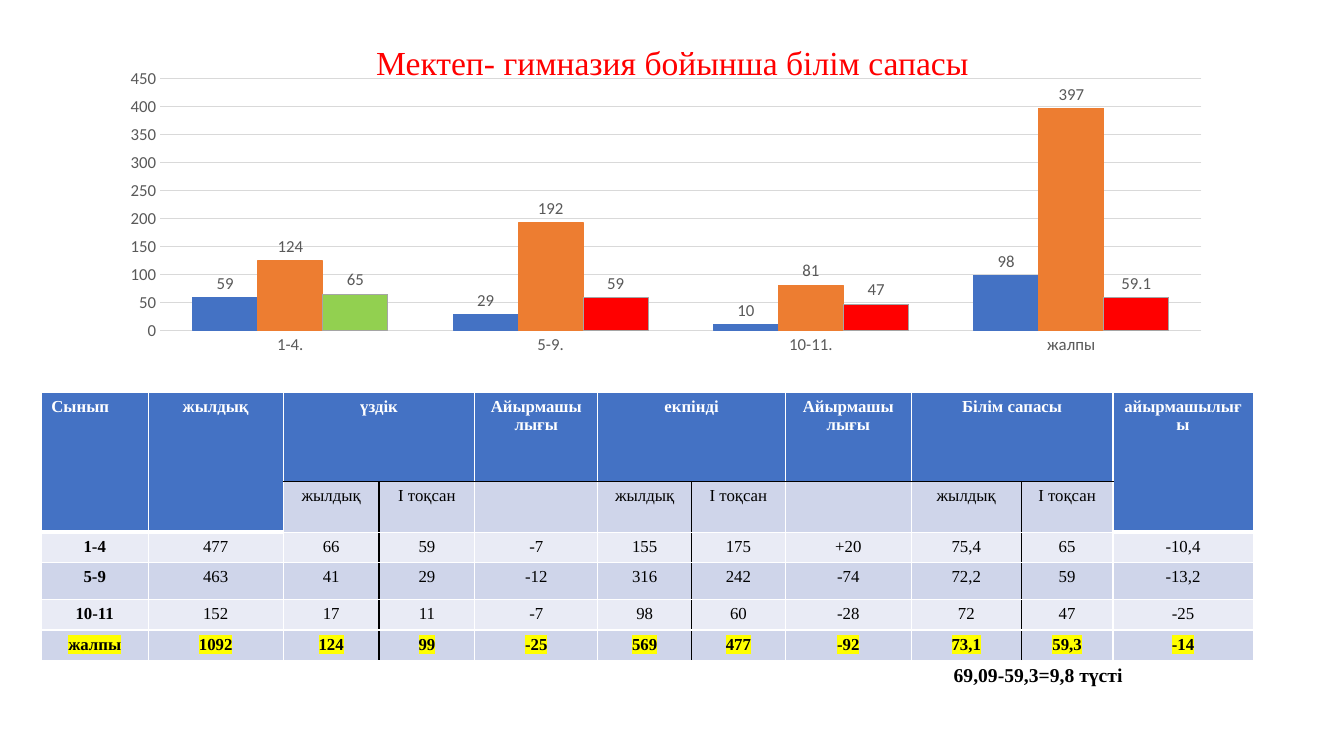
from lxml.etree import SubElement
from pptx import Presentation
from pptx.chart.data import CategoryChartData
from pptx.dml.color import RGBColor
from pptx.enum.chart import XL_CHART_TYPE as ChartType, XL_LABEL_POSITION as LabelPosition
from pptx.enum.chart import XL_TICK_MARK as TickMark
from pptx.enum.text import MSO_ANCHOR as Anchor, PP_ALIGN as Align
from pptx.oxml import parse_xml
from pptx.oxml.ns import nsdecls, qn
from pptx.util import Inches, Pt

WHITE = RGBColor(0xFF, 0xFF, 0xFF)
BLACK = RGBColor(0x00, 0x00, 0x00)
RED = RGBColor(0xFF, 0x00, 0x00)
BLUE = RGBColor(0x44, 0x72, 0xC4)
ORANGE = RGBColor(0xED, 0x7D, 0x31)
GREEN = RGBColor(0x92, 0xD0, 0x50)
SILVER = RGBColor(0xA5, 0xA5, 0xA5)
GRID_GRAY = RGBColor(0xD9, 0xD9, 0xD9)
LABEL_GRAY = RGBColor(0x59, 0x59, 0x59)
LIGHT_BAND = RGBColor(0xE9, 0xEB, 0xF5)
DARK_BAND = RGBColor(0xCF, 0xD5, 0xEA)
YELLOW = RGBColor(0xFF, 0xFF, 0x00)
TEXT_FONT = "Times New Roman"
CHART_FONT = "Calibri"

CATEGORIES = ["1-4.", "5-9.", "10-11.", "жалпы"]
SERIES = [  # name, values, fill, outline
    ("Series 1", (59, 29, 10, 98), BLUE, BLUE),
    ("Series 2", (124, 192, 81, 397), ORANGE, ORANGE),
    ("Series 3", (65, 59, 47, 59.1), RED, SILVER),
]
PLOT_LAYOUT = {"x": 0.084, "y": 0.121, "w": 0.86, "h": 0.793}

COLUMN_WIDTHS = [1.06, 1.34, 0.95, 0.95, 1.22, 0.93, 0.93, 1.25, 1.09, 0.91, 1.39]
ROW_HEIGHTS = [0.89, 0.48, 0.3, 0.37, 0.3, 0.3]
TABLE_ROWS = [
    ["Сынып", "жылдық", "үздік", "", "Айырмашы\nлығы", "екпінді", "",
     "Айырмашы\nлығы", "Білім сапасы", "", "айырмашылығы"],
    ["", "", "жылдық", "І тоқсан", "", "жылдық", "І тоқсан", "", "жылдық", "І тоқсан", ""],
    ["1-4", "477", "66", "59", "-7", "155", "175", "+20", "75,4", "65", "-10,4"],
    ["5-9", "463", "41", "29", "-12", "316", "242", "-74", "72,2", "59", "-13,2"],
    ["10-11", "152", "17", "11", "-7", "98", "60", "-28", "72", "47", "-25"],
    ["жалпы", "1092", "124", "99", "-25", "569", "477", "-92", "73,1", "59,3", "-14"],
]
TALL_COLUMNS = (0, 1, 10)  # header cells two rows high
PAIR_COLUMNS = (2, 5, 8)  # first column of each two-column group
LAST_ROW = len(TABLE_ROWS) - 1


def format_font(font, size, color, name=TEXT_FONT, bold=False):
    font.size, font.name, font.bold = Pt(size), name, bold
    font.color.rgb = color


def add_text(slide, text, left, top, width, height, size, color, bold=False, align=Align.LEFT):
    frame = slide.shapes.add_textbox(
        Inches(left), Inches(top), Inches(width), Inches(height)).text_frame
    frame.word_wrap = True
    frame.vertical_anchor = Anchor.MIDDLE
    frame.text = text
    paragraph = frame.paragraphs[0]
    paragraph.alignment = align
    paragraph.line_spacing = 0.9
    format_font(paragraph.runs[0].font, size, color, bold=bold)


def set_border(cell, side, color, width=1):
    line = SubElement(cell._tc.get_or_add_tcPr(), qn(f"a:ln{side}"), w=str(Pt(width)))
    fill = SubElement(line, qn("a:solidFill"))
    SubElement(fill, qn("a:srgbClr"), val=str(color))


def highlight(run):
    mark = parse_xml(f'<a:highlight {nsdecls("a")}><a:srgbClr val="{YELLOW}"/></a:highlight>')
    run._r.get_or_add_rPr().find(qn("a:latin")).addprevious(mark)


def format_cell(cell, row, column):
    is_header = row == 0 or (row == 1 and column in TALL_COLUMNS)
    # Borders: black inside the pairs and under the group headings
    black_sides = set()
    if row > 0 and column in PAIR_COLUMNS:
        black_sides.add("R")
    if row > 0 and column - 1 in PAIR_COLUMNS:
        black_sides.add("L")
    if row < 2 and column not in TALL_COLUMNS:
        black_sides.add("B" if row == 0 else "T")
    for side in "LRTB":
        thick = side == "B" and row < 2 and column in TALL_COLUMNS
        set_border(cell, side, BLACK if side in black_sides else WHITE, 3 if thick else 1)
    # Fill
    cell.fill.solid()
    cell.fill.fore_color.rgb = BLUE if is_header else DARK_BAND if row % 2 else LIGHT_BAND
    # Text
    bold = is_header or row == LAST_ROW or (row > 1 and column == 0)
    for paragraph in cell.text_frame.paragraphs:
        paragraph.alignment = Align.LEFT if row == column == 0 else Align.CENTER
        for run in paragraph.runs:
            format_font(run.font, 12, WHITE if is_header else BLACK, bold=bold)
            if row == LAST_ROW:
                highlight(run)


def add_quality_table(slide):
    table = slide.shapes.add_table(
        len(ROW_HEIGHTS), len(COLUMN_WIDTHS), Inches(0.41), Inches(3.89),
        Inches(sum(COLUMN_WIDTHS)), Inches(sum(ROW_HEIGHTS))).table
    for column, width in zip(table.columns, COLUMN_WIDTHS):
        column.width = Inches(width)
    for row, height in zip(table.rows, ROW_HEIGHTS):
        row.height = Inches(height)
    for row, texts in enumerate(TABLE_ROWS):
        for column, text in enumerate(texts):
            cell = table.cell(row, column)
            if text:
                cell.text_frame.text = text
            format_cell(cell, row, column)
    for column in TALL_COLUMNS:
        table.cell(0, column).merge(table.cell(1, column))
    for column in PAIR_COLUMNS:
        table.cell(0, column).merge(table.cell(0, column + 1))


def set_plot_layout(chart):
    parts = [("layoutTarget", "inner"), ("xMode", "edge"), ("yMode", "edge"),
             *PLOT_LAYOUT.items()]
    plot_area = chart._chartSpace.chart.plotArea
    for old_layout in plot_area.findall(qn("c:layout")):
        plot_area.remove(old_layout)
    children = "".join(f'<c:{name} val="{value}"/>' for name, value in parts)
    plot_area.insert(0, parse_xml(
        f'<c:layout {nsdecls("c")}><c:manualLayout>{children}</c:manualLayout></c:layout>'))


def format_axis(axis):
    axis.major_tick_mark = axis.minor_tick_mark = TickMark.NONE
    format_font(axis.tick_labels.font, 12, LABEL_GRAY, CHART_FONT)


def add_quality_chart(slide):
    data = CategoryChartData()
    data.categories = CATEGORIES
    for name, values, _, _ in SERIES:
        data.add_series(name, values)
    chart = slide.shapes.add_chart(
        ChartType.COLUMN_CLUSTERED, Inches(0.58), Inches(0.4),
        Inches(12.01), Inches(3.15), data).chart
    chart.has_title = chart.has_legend = False
    format_font(chart.font, 10, BLACK, CHART_FONT)
    set_plot_layout(chart)

    # Axes
    categories, values = chart.category_axis, chart.value_axis
    format_axis(categories)
    format_axis(values)
    values.minimum_scale, values.maximum_scale, values.major_unit = 0, 450, 50
    values.format.line.fill.background()
    for line in (categories.format.line, values.major_gridlines.format.line):
        line.color.rgb = GRID_GRAY
        line.width = Pt(0.75)

    # Columns
    plot = chart.plots[0]
    plot.gap_width, plot.overlap, plot.vary_by_categories = 100, 0, False
    for series, (_, _, color, outline) in zip(plot.series, SERIES):
        first_point = [series.points[0]] if color == RED else []
        for item in [series, *first_point]:
            item.format.fill.solid()
            item.format.fill.fore_color.rgb = color if item is series else GREEN
            item.format.line.color.rgb = outline
            item.format.line.width = Pt(0.75)
        labels = series.data_labels
        labels.show_value = True
        labels.position = LabelPosition.OUTSIDE_END
        format_font(labels.font, 12, LABEL_GRAY, CHART_FONT)


def main():
    presentation = Presentation()
    presentation.slide_width, presentation.slide_height = Inches(13.33), Inches(7.5)
    slide = presentation.slides.add_slide(presentation.slide_layouts[6])
    add_text(slide, "Мектеп- гимназия бойынша білім сапасы", 0.92, 0.4, 11.5, 0.48,
             24, RED, align=Align.CENTER)
    add_quality_table(slide)
    add_quality_chart(slide)
    add_text(slide, "69,09-59,3=9,8 түсті", 9.36, 6.29, 2.85, 0.83, 14, BLACK, bold=True)
    presentation.save("out.pptx")


if __name__ == "__main__":
    main()
